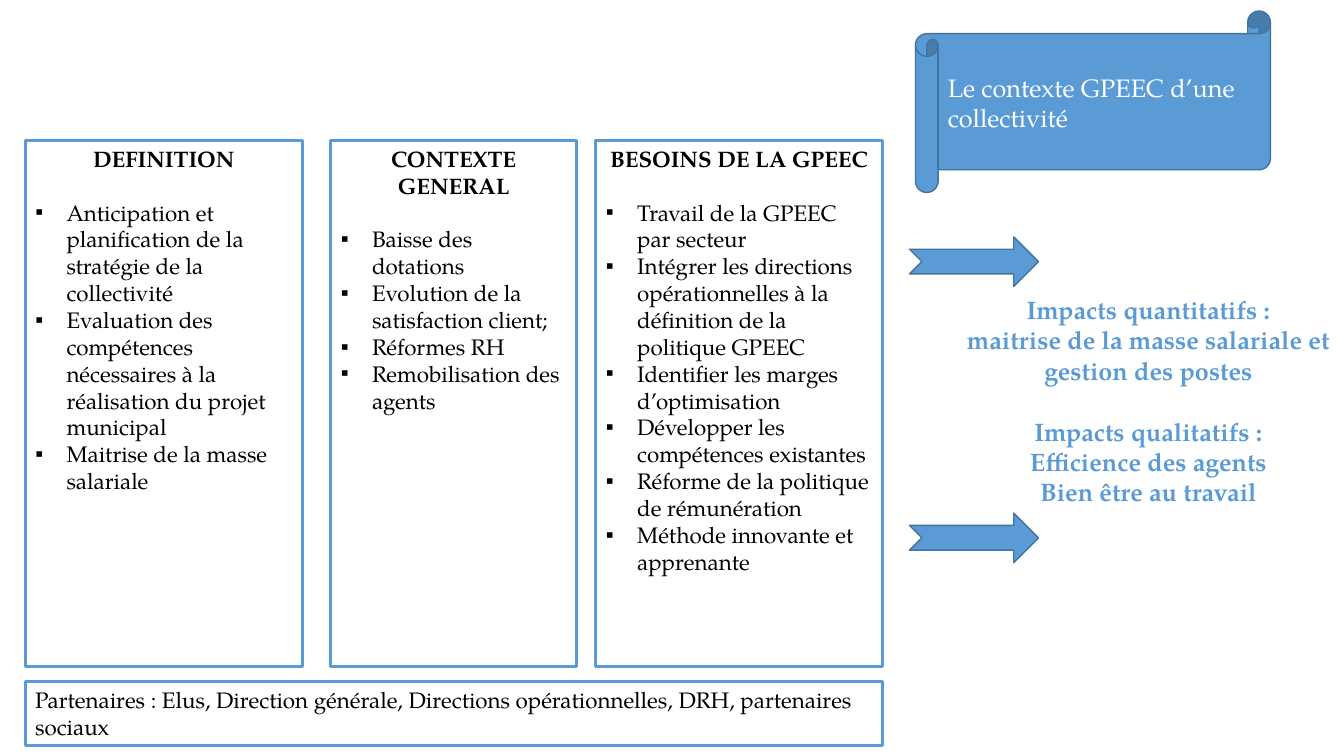
from dataclasses import dataclass

from lxml import etree
from pptx import Presentation
from pptx import util as u
from pptx.dml.color import RGBColor
from pptx.enum import shapes, text
from pptx.oxml.ns import qn

PX = 9144  # 100 px to the inch


@dataclass(frozen=True)
class Theme:
    font: str = "TeX Gyre Pagella"
    blue: str = "5B9BD5"
    edge: str = "43739E"
    black: str = "000000"
    white: str = "FFFFFF"
    body: int = 16
    large: int = 18
    gap: int = 19
    wide: int = 22


T = Theme()
LEFT, MID = text.PP_ALIGN.LEFT, text.PP_ALIGN.CENTER
TOP, BOTTOM = 139, 661
INDENT = 31

# Left edge, width, heading and list of each column
COLUMNS = [
    (25, 275, "DEFINITION", [
        "Anticipation et planification de la stratégie de la collectivité",
        "Evaluation des compétences nécessaires à la réalisation du projet municipal",
        "Maitrise de la masse salariale"]),
    (328, 244, "CONTEXTE GENERAL", [
        "Baisse des dotations",
        "Evolution de la satisfaction client;",
        "Réformes RH",
        "Remobilisation des agents"]),
    (591, 284, "BESOINS DE LA GPEEC", [
        "Travail de la GPEEC par secteur",
        "Intégrer les directions opérationnelles à la définition de la politique GPEEC",
        "Identifier les marges d’optimisation",
        "Développer les compétences existantes",
        "Réforme de la politique de rémunération",
        "Méthode innovante et apprenante"]),
]

IMPACTS = [
    ["Impacts quantitatifs :", "maitrise de la masse salariale et", "gestion des postes"],
    ["Impacts qualitatifs :", "Efficience des agents", "Bien être au travail"],
]


def color(code):
    return RGBColor.from_string(code)


def place(shape, x, y, w, h):
    shape.left, shape.top, shape.width, shape.height = (n * PX for n in (x, y, w, h))


def setup(shape, side=10, anchor=text.MSO_ANCHOR.TOP):
    frame = shape.text_frame
    frame.word_wrap = True
    frame.auto_size = text.MSO_AUTO_SIZE.NONE
    frame.vertical_anchor = anchor
    frame.margin_left = frame.margin_right = side * PX
    frame.margin_top = frame.margin_bottom = 5 * PX
    return frame


def write(frame, words, size=T.body, ink=T.black, bold=False, align=LEFT,
          before=0, after=0, mark=None):
    first = frame.paragraphs[0]
    para = frame.add_paragraph() if first.runs else first
    para.alignment = align
    para.space_before, para.space_after = u.Pt(before), u.Pt(after)
    run = para.add_run()
    run.text = words
    font = run.font
    font.name, font.size, font.bold = T.font, u.Pt(size), bold
    font.color.rgb = color(ink)
    # Bullet and hanging indent
    props = para._p.get_or_add_pPr()
    hang = INDENT * PX if mark else 0
    props.set("marL", str(hang))
    props.set("indent", str(-hang))
    if mark:
        etree.SubElement(props, qn("a:buChar")).set("char", mark)
    else:
        etree.SubElement(props, qn("a:buNone"))


def border(shape):
    shape.line.color.rgb = color(T.blue)
    shape.line.width = u.Pt(2.25)


def solid(slide, kind, x, y, w, h):
    shape = slide.shapes.add_shape(kind, *(n * PX for n in (x, y, w, h)))
    shape.shadow.inherit = False
    shape.fill.solid()
    shape.fill.fore_color.rgb = color(T.blue)
    shape.line.color.rgb = color(T.edge)
    shape.line.width = u.Pt(1)


def column(box, x, w, head, items):
    place(box, x, TOP, w, BOTTOM - TOP)
    border(box)
    frame = setup(box)
    write(frame, head, bold=True, align=MID, after=T.gap)
    for item in items:
        write(frame, item, mark="▪")


def impacts(box):
    place(box, 945, 287, 388, 222)
    frame = setup(box, side=0)
    for g, group in enumerate(IMPACTS):
        for n, line in enumerate(group):
            write(frame, line, size=T.large, ink=T.blue, bold=True, align=MID,
                  before=T.wide if g and not n else 0)


def banner(slide):
    solid(slide, shapes.MSO_SHAPE.HORIZONTAL_SCROLL, 908, 11, 352, 180)
    title = slide.shapes.title
    place(title, 930, 34, 330, 135)
    frame = setup(title, anchor=text.MSO_ANCHOR.MIDDLE)
    write(frame, "Le contexte GPEEC d’une collectivité", size=T.large, ink=T.white)
    # Bring the title in front of the scroll
    slide.shapes._spTree.append(title._element)


def partners(slide):
    box = slide.shapes.add_textbox(*(n * PX for n in (25, 676, 850, 64)))
    border(box)
    write(setup(box), "Partenaires : Elus, Direction générale, "
          "Directions opérationnelles, DRH, partenaires sociaux")


def main():
    deck = Presentation()
    deck.slide_width, deck.slide_height = 1333 * PX, 750 * PX
    slide = deck.slides.add_slide(deck.slide_layouts.get_by_name("Comparison"))
    boxes = [p for p in slide.placeholders if p.placeholder_format.idx > 0]

    # Three columns and the impacts
    for box, data in zip(boxes, COLUMNS):
        column(box, *data)
    impacts(boxes[3])

    # Arrows, partners and title scroll
    for y in (235, 509):
        solid(slide, shapes.MSO_SHAPE.NOTCHED_RIGHT_ARROW, 902, y, 128, 49)
    partners(slide)
    banner(slide)
    deck.save("out.pptx")


if __name__ == "__main__":
    main()
